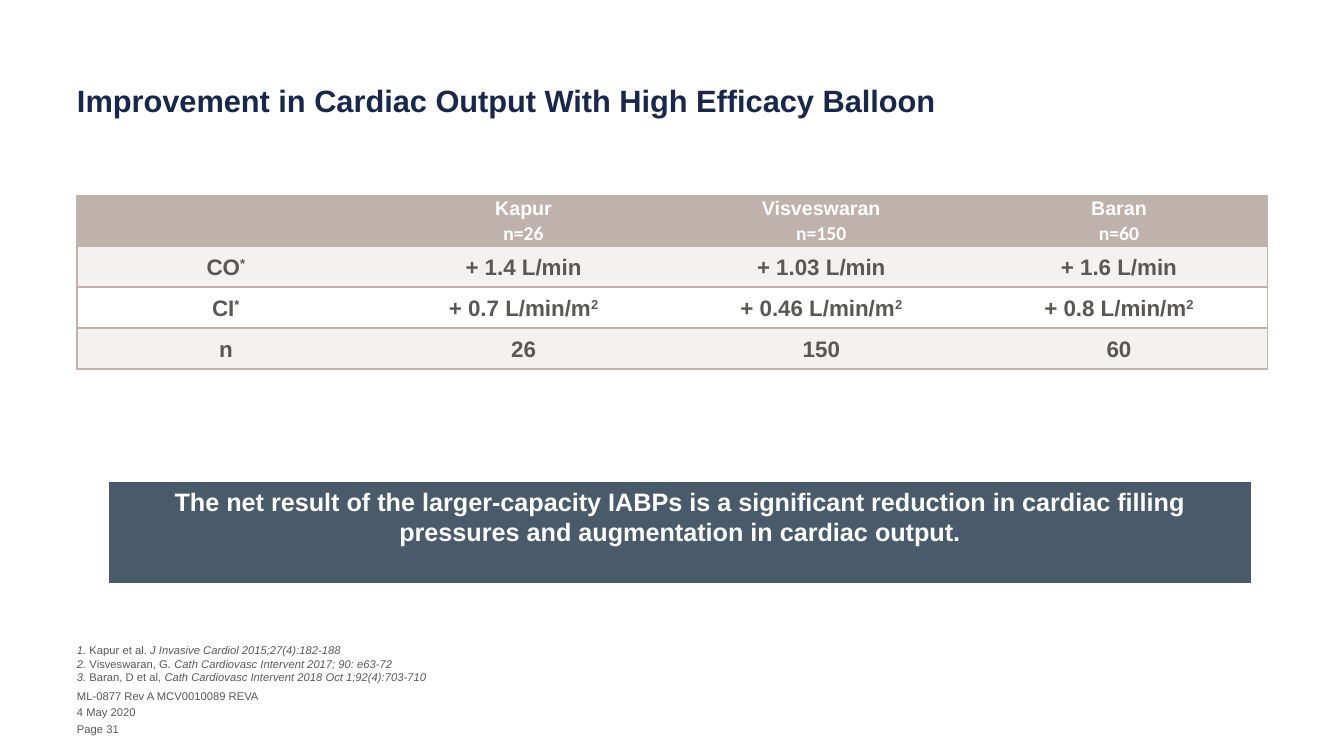
from lxml import etree
from pptx import Presentation
from pptx.dml.color import RGBColor
from pptx.enum.shapes import MSO_SHAPE
from pptx.enum.text import MSO_ANCHOR, MSO_AUTO_SIZE, PP_ALIGN
from pptx.oxml.ns import qn
from pptx.util import Emu, Pt

TOP, MIDDLE, BOTTOM = MSO_ANCHOR.TOP, MSO_ANCHOR.MIDDLE, MSO_ANCHOR.BOTTOM
LEFT, CENTER = PP_ALIGN.LEFT, PP_ALIGN.CENTER
RECTANGLE = MSO_SHAPE.RECTANGLE
NO_FIT = MSO_AUTO_SIZE.NONE

COLORS = {
    "navy": "18274A",
    "slate": "495A6B",
    "taupe": "BFB1AC",
    "band": "F4F2F1",
    "gray": "595857",
    "white": "FFFFFF",
}
MARGIN = 77


def px(length):
    return Emu(round(length * 914400 / 100.8))


def color(name):
    return RGBColor.from_string(COLORS[name])


class SlideBuilder:
    font = "Arial"

    def __init__(self, deck):
        self.page = deck.slides.add_slide(deck.slide_layouts[5])

    def add_spans(self, para, spans, size, ink, bold=False, align=LEFT, font=None):
        para.alignment = align
        for text, variant in spans:
            span = para.add_run()
            span.text = text
            span.font.name = font or self.font
            span.font.size = Pt(size)
            span.font.bold = bold
            span.font.italic = variant == "italic"
            span.font.color.rgb = color(ink)
            if variant == "super":
                span._r.get_or_add_rPr().set("baseline", "30000")

    def frame(self, box, anchor, inset=0):
        frame = box.text_frame
        frame.word_wrap = True
        frame.auto_size = NO_FIT
        frame.vertical_anchor = anchor
        frame.margin_left = frame.margin_right = px(inset)
        frame.margin_top = frame.margin_bottom = px(inset)
        return frame

    def title(self, text, left, top, width, height):
        box = self.page.shapes.title
        box.left, box.top, box.width, box.height = map(px, (left, top, width, height))
        frame = self.frame(box, BOTTOM)
        self.add_spans(frame.paragraphs[0], [(text, "")], 22, "navy", True)

    def text(self, lines, left, top, width, height, anchor=MIDDLE):
        box = self.page.shapes.add_textbox(*map(px, (left, top, width, height)))
        frame = self.frame(box, anchor)
        for index, spans in enumerate(lines):
            para = frame.add_paragraph() if index else frame.paragraphs[0]
            self.add_spans(para, spans, 8, "gray")
        return frame

    def banner(self, text, left, top, width, height):
        box = self.page.shapes.add_shape(RECTANGLE, *map(px, (left, top, width, height)))
        box.shadow.inherit = False
        box.fill.solid()
        box.fill.fore_color.rgb = color("slate")
        box.line.fill.background()
        frame = self.frame(box, TOP, 4)
        self.add_spans(frame.paragraphs[0], [(text, "")], 18, "white", True, CENTER)

    def border(self, cell, side, visible):
        edge = etree.SubElement(cell._tc.get_or_add_tcPr(), qn(f"a:ln{side}"), w="12700")
        if visible:
            fill = etree.SubElement(edge, qn("a:solidFill"))
            etree.SubElement(fill, qn("a:srgbClr"), val=COLORS["taupe"])
        else:
            etree.SubElement(edge, qn("a:noFill"))

    def cell(self, cell, fill, first, last):
        for side, visible in (("L", first), ("R", last), ("T", True), ("B", True)):
            self.border(cell, side, visible)
        cell.fill.solid()
        cell.fill.fore_color.rgb = color(fill)
        cell.vertical_anchor = MIDDLE
        cell.margin_left = cell.margin_right = px(11)
        cell.margin_top = cell.margin_bottom = 0

    def table(self, studies, measures, left, top, width, heights):
        columns = len(studies) + 1
        area = map(px, (left, top, width, sum(heights)))
        grid = self.page.shapes.add_table(len(heights), columns, *area).table
        grid.horz_banding = False
        for row, height in zip(grid.rows, heights):
            row.height = px(height)
        for r in range(len(heights)):
            fill = "taupe" if r == 0 else "band" if r % 2 else "white"
            for c in range(columns):
                self.cell(grid.cell(r, c), fill, c == 0, c == columns - 1)
        for c, (study, count) in enumerate(studies, 1):
            frame = grid.cell(0, c).text_frame
            name, size = frame.paragraphs[0], frame.add_paragraph()
            self.add_spans(name, [(study, "")], 14, "white", True, CENTER)
            self.add_spans(size, [(count, "")], 14, "white", True, CENTER, "Calibri")
            name.line_spacing = size.line_spacing = 1.07
        for r, measure in enumerate(measures, 1):
            for c, spans in enumerate(measure):
                para = grid.cell(r, c).text_frame.paragraphs[0]
                para.line_spacing = 1.07
                self.add_spans(para, spans, 16, "gray", True, CENTER)


def main():
    deck = Presentation()
    deck.slide_width, deck.slide_height = px(1344), px(756)
    slide = SlideBuilder(deck)
    slide.title("Improvement in Cardiac Output With High Efficacy Balloon", MARGIN, 44, 1191, 75)

    studies = [("Kapur", "n=26"), ("Visveswaran", "n=150"), ("Baran", "n=60")]
    star, square = ("*", "super"), ("2", "super")
    output = [[(f"+ {value} L/min", "")] for value in ("1.4", "1.03", "1.6")]
    index = [[(f"+ {value} L/min/m", ""), square] for value in ("0.7", "0.46", "0.8")]
    patients = [[(value, "")] for value in ("26", "150", "60")]
    measures = [
        [[("CO", ""), star], *output],
        [[("CI", ""), star], *index],
        [[("n", "")], *patients],
    ]
    slide.table(studies, measures, MARGIN, 196, 1191, [50, 41, 41, 41])

    slide.banner(
        "The net result of the larger-capacity IABPs is a significant reduction in cardiac "
        "filling pressures and augmentation in cardiac output.", 109, 482, 1142, 101)

    references = [
        [("1. ", "italic"), ("Kapur et al. ", ""),
         ("J Invasive Cardiol 2015;27(4):182-188", "italic")],
        [("2. ", "italic"), ("Visveswaran, G", ""),
         (". Cath Cardiovasc Intervent 2017; 90: e63-72", "italic")],
        [("3. ", "italic"), ("Baran, D et al", ""),
         (", Cath Cardiovasc Intervent 2018 Oct 1;92(4):703-710", "italic")],
    ]
    frame = slide.text(references, MARGIN, 629, 747, 112, TOP)
    frame.paragraphs[0].line_spacing = Pt(20)

    footers = ["ML-0877 Rev A MCV0010089 REVA", "4 May 2020", "Page 31"]
    for row, footer in enumerate(footers):
        slide.text([[(footer, "")]], MARGIN, 690 + 16 * row + row // 2, 953, 12)

    deck.save("out.pptx")


if __name__ == "__main__":
    main()
